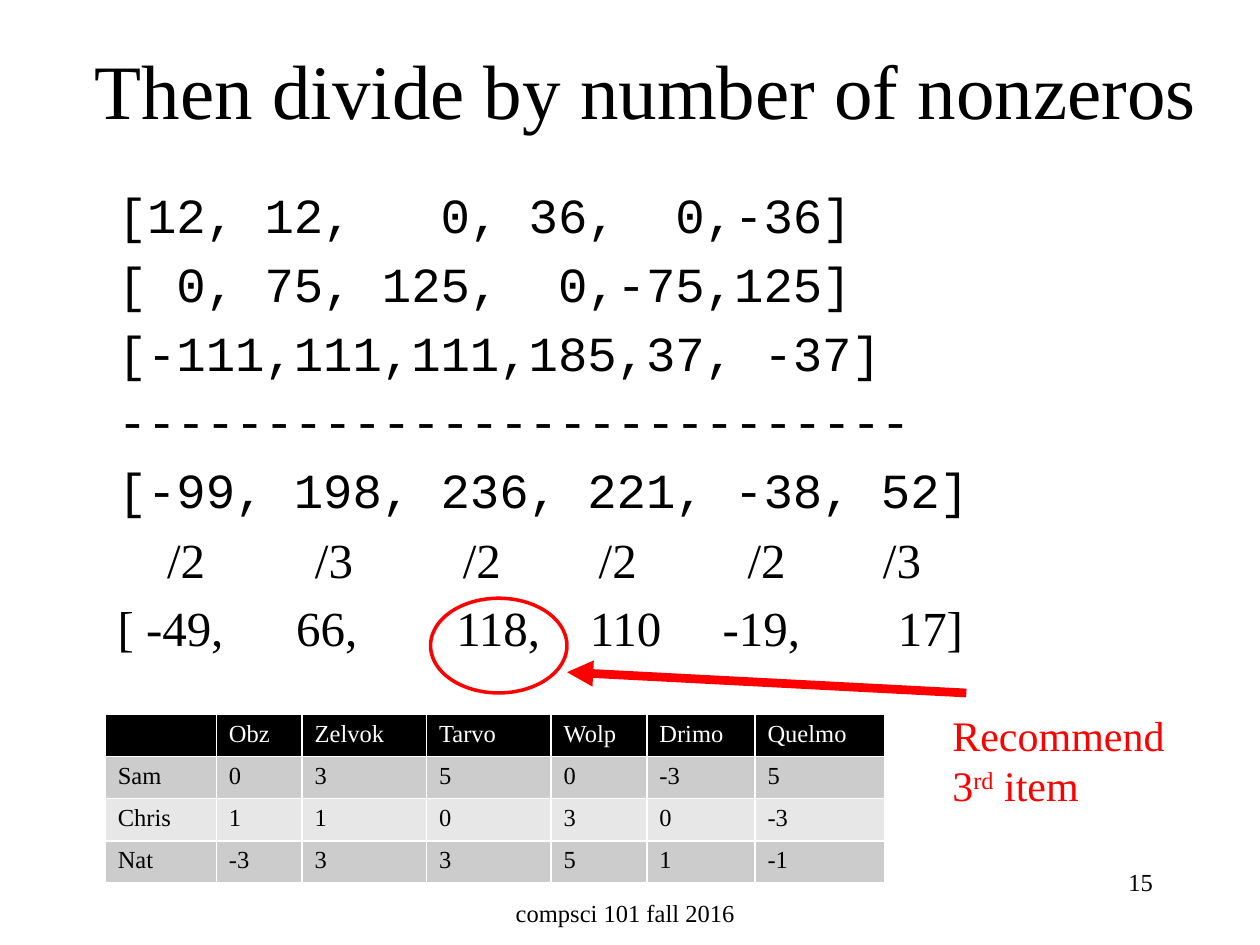
from lxml import etree
from pptx import Presentation
from pptx import util as u
from pptx.dml.color import RGBColor
from pptx.enum import shapes, text
from pptx.oxml import ns

SERIF, MONO = "Times New Roman", "Courier New"
BLACK, WHITE, RED = "000000", "FFFFFF", "FF0000"
BAND_COLORS = ["CCCCCC", "E7E7E7"]

VECTORS = [
    "[12, 12,   0, 36,  0,-36]",
    "[ 0, 75, 125,  0,-75,125]",
    "[-111,111,111,185,37, -37]",
    "-" * 27,
    "[-99, 198, 236, 221, -38, 52]",
]
# Tab-separated rows with their tab stops in centimetres
TABBED_ROWS = [
    ("\t/2\t/3\t/2\t/2\t/2\t/3", [1, 3.98, 6.96, 9.7, 12.7, 15.43]),
    ("[ -49,\t66,\t118,\t110\t-19,\t17]", [3.6, 6.83, 9.52, 12.2, 15.73]),
]
RATINGS = [
    ["", "Obz", "Zelvok", "Tarvo", "Wolp", "Drimo", "Quelmo"],
    ["Sam", "0", "3", "5", "0", "-3", "5"],
    ["Chris", "1", "1", "0", "3", "0", "-3"],
    ["Nat", "-3", "3", "3", "5", "1", "-1"],
]
COLUMN_WIDTHS = [2.24, 1.73, 2.51, 2.51, 1.93, 2.18, 2.62]
ROW_HEIGHT = 0.85
ROW_GAP = u.Pt(5.6)


def rgb(color):
    return RGBColor.from_string(color)


def box(left, top, width, height):
    return [u.Cm(value) for value in (left, top, width, height)]


def set_font(paragraph, size, color=BLACK, name=SERIF):
    font = paragraph.font
    font.name, font.size, font.bold = name, u.Pt(size), False
    font.color.rgb = rgb(color)


def fill_placeholder(shape, position, wording):
    shape.left, shape.top, shape.width, shape.height = box(*position)
    frame = shape.text_frame
    frame.text = wording
    frame.auto_size = text.MSO_AUTO_SIZE.NONE
    return frame


def add_title(slide, wording):
    frame = fill_placeholder(slide.shapes.title, (1.06, 0.2, 23.93, 3.18), wording)
    frame.vertical_anchor = text.MSO_ANCHOR.MIDDLE
    frame.paragraphs[0].alignment = text.PP_ALIGN.CENTER
    set_font(frame.paragraphs[0], 44)


def add_vectors(slide):
    frame = fill_placeholder(
        slide.placeholders[1], (2.12, 3.6, 21.59, 7.3), "\n".join(VECTORS))
    for paragraph in frame.paragraphs:
        paragraph.space_before = ROW_GAP
        properties = paragraph._p.get_or_add_pPr()
        properties.set("marL", "0")
        properties.set("indent", "0")
        etree.SubElement(properties, ns.qn("a:buNone"))
        set_font(paragraph, 28, name=MONO)


def add_text(slide, position, wording, size, color=BLACK, alignment=None, wrap=True):
    frame = slide.shapes.add_textbox(*box(*position)).text_frame
    frame.word_wrap = wrap
    frame.text = wording
    for paragraph in frame.paragraphs:
        paragraph.alignment = alignment
        set_font(paragraph, size, color)
    return frame


def add_averages(slide):
    """Divisors and quotients, lined up under the vectors by tab stops."""
    wording = "\n".join(row for row, _ in TABBED_ROWS)
    frame = add_text(slide, (2.12, 10.54, 21.59, 3.2), wording, 28)
    for paragraph, (_, stops) in zip(frame.paragraphs, TABBED_ROWS):
        paragraph.space_after = ROW_GAP
        tabs = etree.Element(ns.qn("a:tabLst"))
        for stop in stops:
            etree.SubElement(tabs, ns.qn("a:tab"), pos=str(int(u.Cm(stop))), algn="l")
        paragraph._p.pPr.find(ns.qn("a:defRPr")).addprevious(tabs)


def add_circle(slide):
    circle = slide.shapes.add_shape(shapes.MSO_SHAPE.OVAL, *box(8.68, 12.06, 2.75, 1.91))
    circle.shadow.inherit = False
    circle.fill.solid()
    circle.fill.fore_color.rgb = rgb(WHITE)
    circle.line.color.rgb = rgb(RED)
    circle.line.width = u.Pt(2)
    slide.shapes._spTree.insert(2, circle._element)  # behind the text


def add_ratings_table(slide):
    frame = slide.shapes.add_table(
        len(RATINGS), len(COLUMN_WIDTHS),
        *box(2.12, 14.4, sum(COLUMN_WIDTHS), ROW_HEIGHT * len(RATINGS)))
    table = frame.table
    for column, width in zip(table.columns, COLUMN_WIDTHS):
        column.width = u.Cm(width)
    for index, (row, values) in enumerate(zip(table.rows, RATINGS)):
        row.height = u.Cm(ROW_HEIGHT)
        fill = BAND_COLORS[(index - 1) % 2] if index else BLACK
        for cell, value in zip(row.cells, values):
            cell.fill.solid()
            cell.fill.fore_color.rgb = rgb(fill)
            cell.text = value
            set_font(cell.text_frame.paragraphs[0], 14, BLACK if index else WHITE)


def add_arrow(slide):
    arrow = slide.shapes.add_connector(
        shapes.MSO_CONNECTOR.STRAIGHT, *box(19.48, 13.97, 11.43, 13.55))
    arrow.line.color.rgb = rgb(RED)
    arrow.line.width = u.Pt(5)
    etree.SubElement(arrow.line._get_or_add_ln(), ns.qn("a:tailEnd"), type="triangle")
    etree.SubElement(arrow._element.spPr, ns.qn("a:effectLst"))


def add_recommendation(slide):
    frame = add_text(slide, (18.95, 14.18, 4.83, 2.31), "Recommend\n3", 24, RED, wrap=False)
    item = frame.paragraphs[1]
    ordinal = item.add_run()
    ordinal.text = "rd"
    ordinal._r.get_or_add_rPr().set("baseline", "30000")
    item.add_run().text = " item"


def main():
    presentation = Presentation()
    presentation.slide_width, presentation.slide_height = u.Cm(25.4), u.Cm(19.05)
    slide = presentation.slides.add_slide(presentation.slide_layouts[1])
    add_circle(slide)
    add_title(slide, "Then divide by number of nonzeros")
    add_vectors(slide)
    add_averages(slide)
    add_ratings_table(slide)
    add_arrow(slide)
    add_recommendation(slide)
    add_text(slide, (8.58, 17.98, 8.05, 1.27), "compsci 101 fall 2016", 14,
             alignment=text.PP_ALIGN.CENTER)
    add_text(slide, (18.2, 17.35, 5.29, 1.27), "15", 14, alignment=text.PP_ALIGN.RIGHT)
    presentation.save("out.pptx")


if __name__ == "__main__":
    main()
